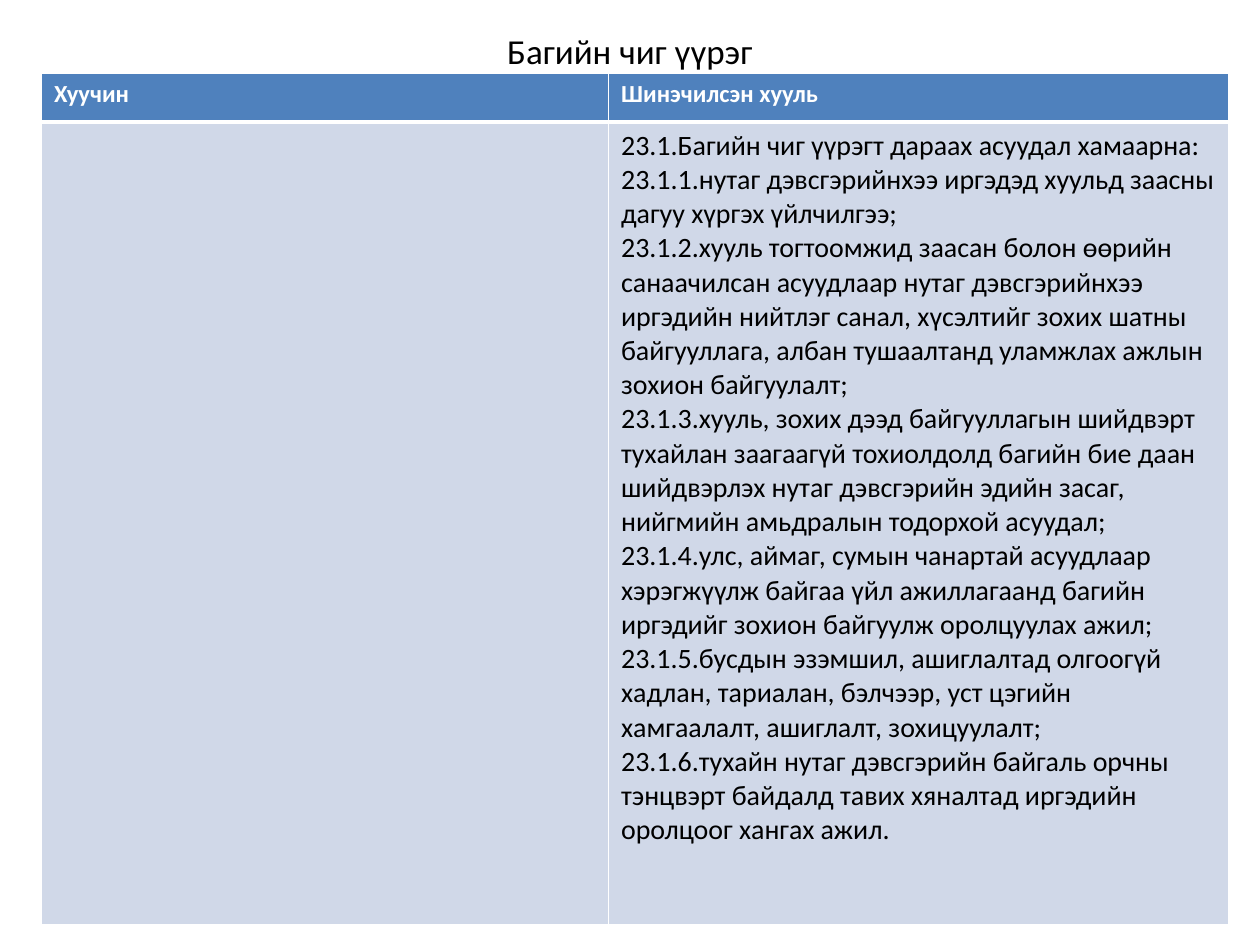
from pptx import Presentation
from pptx.dml.color import RGBColor as RGB
from pptx.enum.text import MSO_ANCHOR as Anchor, PP_ALIGN as Align
from pptx.oxml import parse_xml
from pptx.oxml.ns import nsdecls
from pptx.util import Inches, Pt

# Content
TITLE = "Багийн чиг үүрэг"
HEADS = ["Хуучин", "Шинэчилсэн хууль"]
DUTIES = [
    "23.1.Багийн чиг үүрэгт дараах асуудал хамаарна:",
    "23.1.1.нутаг дэвсгэрийнхээ иргэдэд хуульд заасны дагуу хүргэх үйлчилгээ;",
    "23.1.2.хууль тогтоомжид заасан болон өөрийн санаачилсан асуудлаар "
    "нутаг дэвсгэрийнхээ иргэдийн нийтлэг санал, хүсэлтийг зохих шатны "
    "байгууллага, албан тушаалтанд уламжлах ажлын зохион байгуулалт;",
    "23.1.3.хууль, зохих дээд байгууллагын шийдвэрт тухайлан заагаагүй "
    "тохиолдолд багийн бие даан шийдвэрлэх нутаг дэвсгэрийн эдийн засаг, "
    "нийгмийн амьдралын тодорхой асуудал;",
    "23.1.4.улс, аймаг, сумын чанартай асуудлаар хэрэгжүүлж байгаа үйл "
    "ажиллагаанд багийн иргэдийг зохион байгуулж оролцуулах ажил;",
    "23.1.5.бусдын эзэмшил, ашиглалтад олгоогүй хадлан, тариалан, бэлчээр, "
    "уст цэгийн хамгаалалт, ашиглалт, зохицуулалт;",
    "23.1.6.тухайн нутаг дэвсгэрийн байгаль орчны тэнцвэрт байдалд тавих "
    "хяналтад иргэдийн оролцоог хангах ажил.",
]
ROWS = [HEADS, ["", "\n".join(DUTIES)]]

# Look and grid, in inches
COLORS = {"ink": "000000", "white": "FFFFFF", "head": "4F81BD", "body": "D0D8E8"}
FONT = "Calibri"
COLS = [4.5, 4.92]
HEIGHTS = [0.39, 6.37]
LEFT, TOP = 0.33, 0.58


def style(frame, size, color, bold=False):
    for para in frame.paragraphs:
        for run in para.runs:
            font = run.font
            font.name, font.size, font.bold = FONT, Pt(size), bold
            font.color.rgb = RGB.from_string(COLORS[color])


def border(cell, widths):
    props = cell._tc.get_or_add_tcPr()
    for spot, (side, width) in enumerate(widths.items()):
        props.insert(spot, parse_xml(
            f'<a:ln{side} {nsdecls("a")} w="{Pt(width)}"><a:solidFill>'
            f'<a:srgbClr val="{COLORS["white"]}"/></a:solidFill></a:ln{side}>'))


deck = Presentation()
deck.slide_width, deck.slide_height = Inches(10), Inches(7.5)
slide = deck.slides.add_slide(deck.slide_layouts[6])

# Title
box = slide.shapes.add_textbox(Inches(0.5), Inches(0.3), Inches(9), Inches(0.2))
frame = box.text_frame
frame.word_wrap = True
frame.vertical_anchor = Anchor.MIDDLE
frame.margin_top = frame.margin_bottom = 0
frame.text = TITLE
frame.paragraphs[0].alignment = Align.CENTER
style(frame, 20, "ink")

# Table of the old and the new law
table = slide.shapes.add_table(
    len(ROWS), len(COLS), Inches(LEFT), Inches(TOP),
    Inches(sum(COLS)), Inches(sum(HEIGHTS))).table
for col, width in zip(table.columns, COLS):
    col.width = Inches(width)
for row, height in zip(table.rows, HEIGHTS):
    row.height = Inches(height)

for r, texts in enumerate(ROWS):
    head = r == 0
    for c, text in enumerate(texts):
        cell = table.cell(r, c)
        cell.text_frame.text = text
        style(cell.text_frame, 14 if head else 16, "white" if head else "ink", head)
        cell.fill.solid()
        cell.fill.fore_color.rgb = RGB.from_string(COLORS["head" if head else "body"])
        border(cell, {"L": 1, "R": 1, "T": 1 if head else 3, "B": 3 if head else 1})

deck.save("out.pptx")
